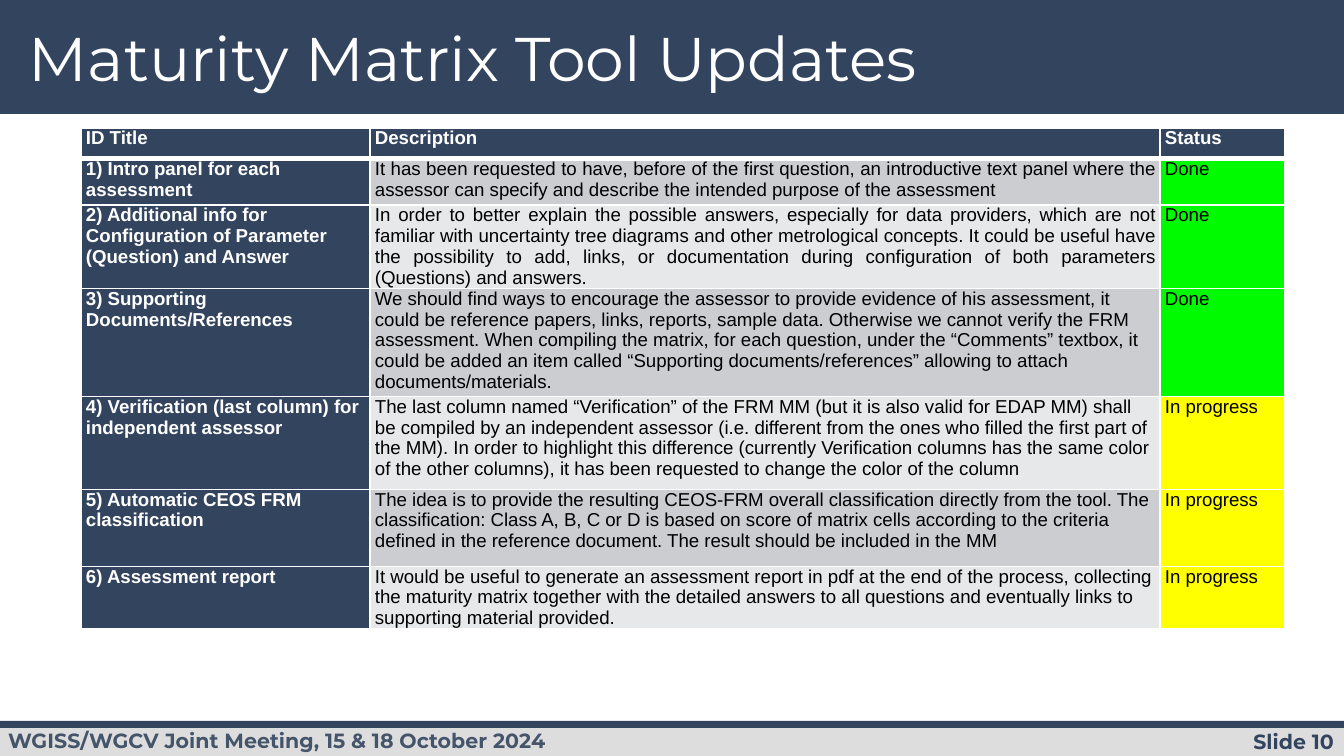
from dataclasses import dataclass

from lxml.etree import SubElement
from pptx import Presentation
from pptx.dml.color import RGBColor
from pptx.enum.shapes import MSO_SHAPE as Shape
from pptx.enum.text import MSO_ANCHOR as Anchor, PP_ALIGN as Align
from pptx.oxml.ns import qn
from pptx.util import Emu, Pt

EMU_PER_PX = 914400 / 134.4
NAVY = RGBColor(0x33, 0x44, 0x5F)
SLATE = RGBColor(0x44, 0x54, 0x6A)
SILVER = RGBColor(0xDD, 0xDD, 0xDD)
DARK_BAND = RGBColor(0xCC, 0xCD, 0xD1)
LIGHT_BAND = RGBColor(0xE7, 0xE8, 0xE9)
GREEN = RGBColor(0x00, 0xFA, 0x00)
YELLOW = RGBColor(0xFF, 0xFF, 0x00)
WHITE = RGBColor(0xFF, 0xFF, 0xFF)
BLACK = RGBColor(0x00, 0x00, 0x00)
STATUS_FILL = {"Done": GREEN, "In progress": YELLOW}


@dataclass
class Box:
    left: int
    top: int
    width: int
    height: int

    def emu(self) -> list[Emu]:
        return [px(n) for n in (self.left, self.top, self.width, self.height)]


@dataclass
class Update:
    height: int
    title: str
    description: str
    status: str
    align: Align = Align.LEFT


@dataclass
class Style:
    size: int
    color: RGBColor
    bold: bool = False
    font: str = "Montserrat"
    align: Align = Align.LEFT


HEADER_HEIGHT = 31
HEADINGS = ("ID Title", "Description", "Status")
COLUMN_WIDTHS = (289, 790, 125)
UPDATES = [
    Update(46, "1) Intro panel for each assessment",
           "It has been requested to have, before of the first question, an introductive text "
           "panel where the assessor can specify and describe the intended purpose of the "
           "assessment", "Done", Align.JUSTIFY),
    Update(83, "2) Additional info for Configuration of Parameter (Question) and Answer",
           "In order to better explain the possible answers, especially for data providers, "
           "which are not familiar with uncertainty tree diagrams and other metrological "
           "concepts. It could be useful have the possibility to add, links, or documentation "
           "during configuration of both parameters (Questions) and answers.",
           "Done", Align.JUSTIFY),
    Update(108, "3) Supporting Documents/References",
           "We should find ways to encourage the assessor to provide evidence of his "
           "assessment, it could be reference papers, links, reports, sample data. Otherwise "
           "we cannot verify the FRM assessment. When compiling the matrix, for each question, "
           "under the “Comments” textbox, it could be added an item called “Supporting "
           "documents/references” allowing to attach documents/materials.", "Done"),
    Update(93, "4) Verification (last column) for independent assessor",
           "The last column named “Verification” of the FRM MM (but it is also valid for EDAP "
           "MM) shall be compiled by an independent assessor (i.e. different from the ones who "
           "filled the first part of the MM). In order to highlight this difference (currently "
           "Verification columns has the same color of the other columns), it has been "
           "requested to change the color of the column", "In progress"),
    Update(77, "5) Automatic CEOS FRM classification",
           "The idea is to provide the resulting CEOS-FRM overall classification directly from "
           "the tool. The classification: Class A, B, C or D is based on score of matrix cells "
           "according to the criteria defined in the reference document. The result should be "
           "included in the MM", "In progress"),
    Update(62, "6) Assessment report",
           "It would be useful to generate an assessment report in pdf at the end of the "
           "process, collecting the maturity matrix together with the detailed answers to all "
           "questions and eventually links to supporting material provided.", "In progress"),
]


def px(length: int) -> Emu:
    return Emu(round(length * EMU_PER_PX))


def write(frame, text: str, style: Style) -> None:
    frame.text = text
    paragraph = frame.paragraphs[0]
    paragraph.alignment = style.align
    font = paragraph.runs[0].font
    font.name, font.size, font.bold = style.font, Pt(style.size), style.bold
    font.color.rgb = style.color


def set_insets(frame, side: int, end: int) -> None:
    frame.margin_left = frame.margin_right = px(side)
    frame.margin_top = frame.margin_bottom = px(end)


def add_band(slide, box: Box, color: RGBColor) -> None:
    band = slide.shapes.add_shape(Shape.RECTANGLE, *box.emu())
    band.shadow.inherit = False
    band.fill.solid()
    band.fill.fore_color.rgb = color
    band.line.fill.background()


def add_label(slide, box: Box, text: str, style: Style, side: int, end: int) -> None:
    frame = slide.shapes.add_textbox(*box.emu()).text_frame
    frame.word_wrap = True
    set_insets(frame, side, end)
    write(frame, text, style)


def add_borders(cell, top: int, bottom: int) -> None:
    properties = cell._tc.get_or_add_tcPr()
    for side, width in (("L", 1), ("R", 1), ("T", top), ("B", bottom)):
        line = SubElement(properties, qn(f"a:ln{side}"), w=str(Pt(width)))
        fill = SubElement(line, qn("a:solidFill"))
        SubElement(fill, qn("a:srgbClr"), val=str(WHITE))


def fill_cell(cell, text: str, fill: RGBColor, color: RGBColor, bold: bool,
              align: Align, top: int = 1, bottom: int = 1) -> None:
    add_borders(cell, top, bottom)
    cell.fill.solid()
    cell.fill.fore_color.rgb = fill
    set_insets(cell, 5, 0)
    write(cell.text_frame, text, Style(10, color, bold, "Arial", align))


def add_updates_table(slide, left: int, top: int) -> None:
    heights = [HEADER_HEIGHT] + [update.height for update in UPDATES]
    box = Box(left, top, sum(COLUMN_WIDTHS), sum(heights))
    table = slide.shapes.add_table(len(heights), len(COLUMN_WIDTHS), *box.emu()).table
    for column, width in zip(table.columns, COLUMN_WIDTHS):
        column.width = px(width)
    for row, height in zip(table.rows, heights):
        row.height = px(height)

    # Heading row
    for index, heading in enumerate(HEADINGS):
        align = Align.LEFT if heading == "Status" else Align.JUSTIFY
        fill_cell(table.cell(0, index), heading, NAVY, WHITE, True, align, bottom=3)

    # One row per update, in alternating bands
    for index, update in enumerate(UPDATES, start=1):
        top_line = 3 if index == 1 else 1
        band = DARK_BAND if index % 2 else LIGHT_BAND
        fill_cell(table.cell(index, 0), update.title, NAVY, WHITE, True,
                  Align.LEFT, top_line)
        fill_cell(table.cell(index, 1), update.description, band, BLACK, False,
                  update.align, top_line)
        fill_cell(table.cell(index, 2), update.status, STATUS_FILL[update.status], BLACK,
                  False, Align.LEFT, top_line)


def main() -> None:
    deck = Presentation()
    deck.slide_width, deck.slide_height = px(1344), px(756)
    slide = deck.slides.add_slide(deck.slide_layouts[5])

    # Header and footer bands
    add_band(slide, Box(0, 0, 1344, 114), NAVY)
    add_band(slide, Box(0, 725, 1344, 31), SILVER)
    add_band(slide, Box(0, 721, 1344, 7), NAVY)

    # Footer texts
    add_label(slide, Box(1132, 724, 212, 35), "Slide 10",
              Style(11, NAVY, True, align=Align.RIGHT), 10, 5)
    add_label(slide, Box(-5, 716, 746, 52), "WGISS/WGCV Joint Meeting, 15 & 18 October 2024",
              Style(11, SLATE, True), 13, 13)

    # Title, brought in front of the header band
    title = slide.shapes.title
    title.left, title.top, title.width, title.height = Box(19, 19, 1035, 86).emu()
    title.element.getparent().append(title.element)
    set_insets(title.text_frame, 10, 5)
    title.text_frame.vertical_anchor = Anchor.MIDDLE
    write(title.text_frame, "Maturity Matrix Tool Updates", Style(33, WHITE))
    title.text_frame.paragraphs[0].line_spacing = 0.9

    add_updates_table(slide, 81, 128)
    deck.save("out.pptx")


if __name__ == "__main__":
    main()
